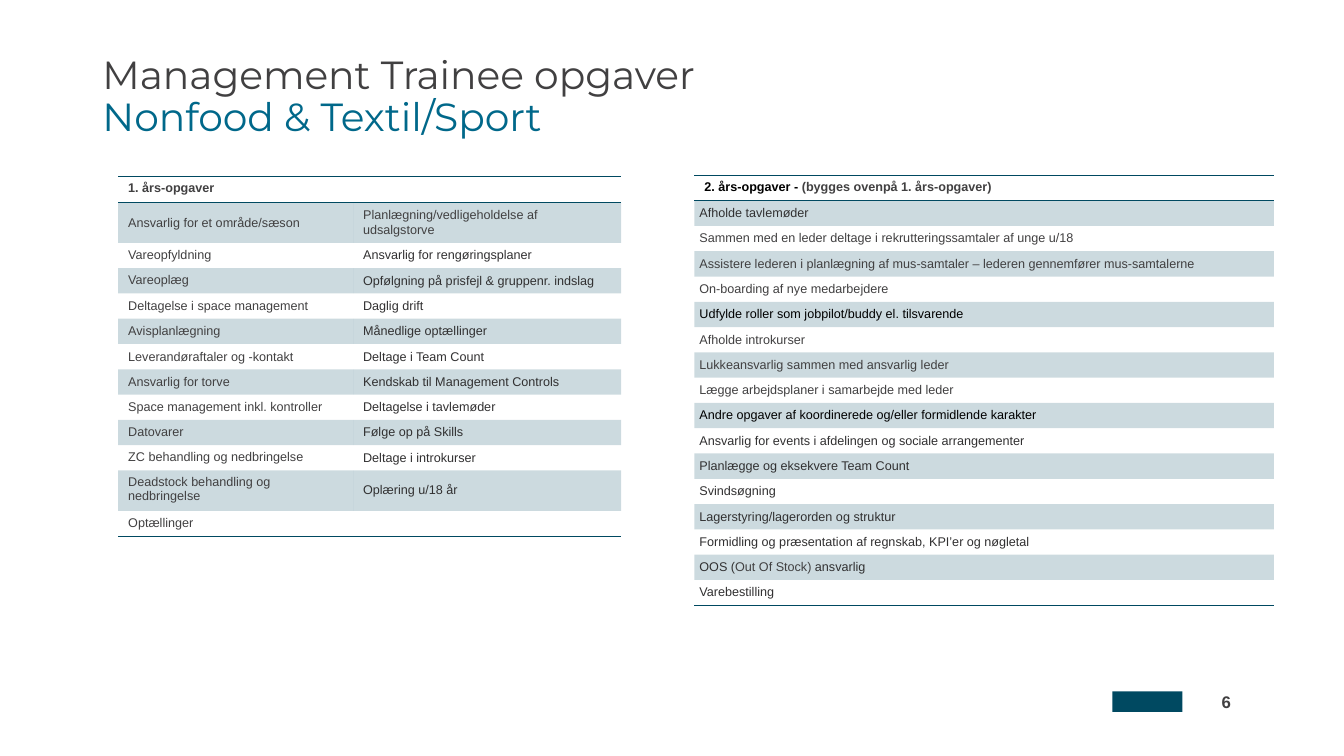
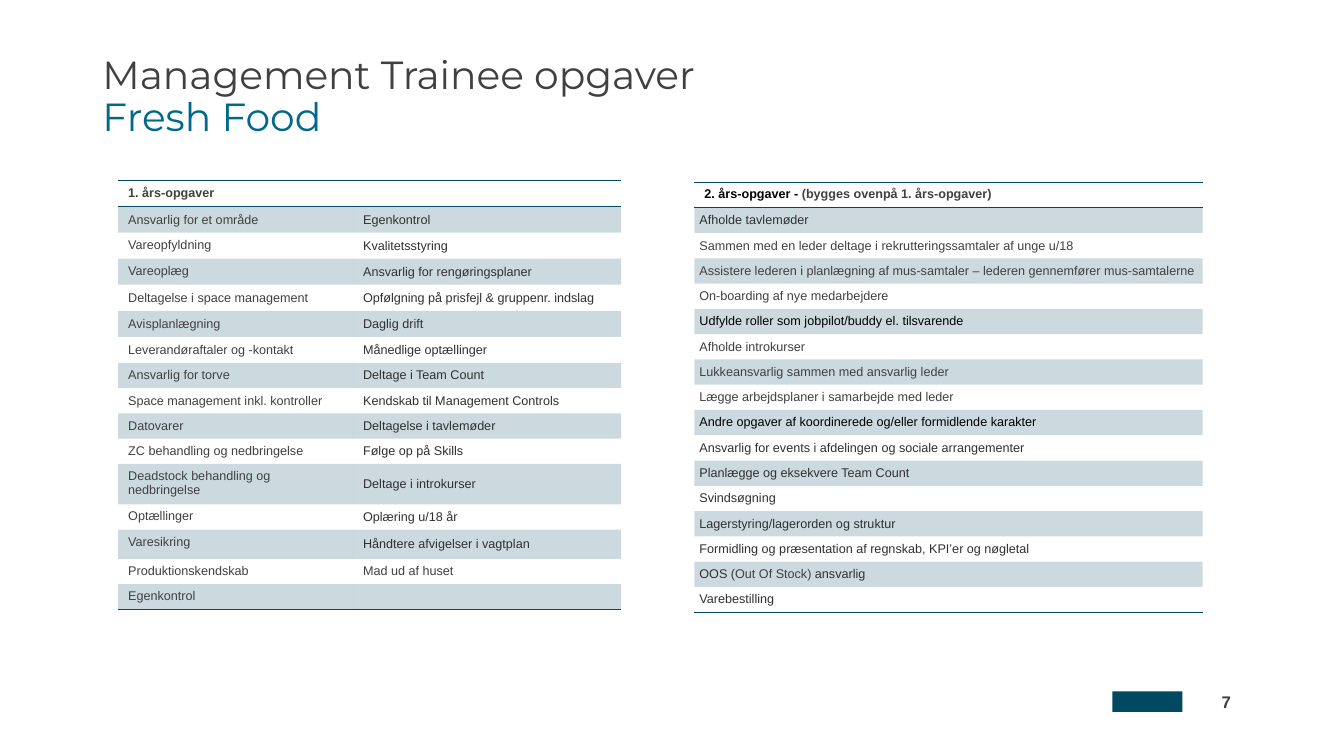
from dataclasses import dataclass

from lxml.etree import SubElement
from pptx import Presentation
from pptx.dml.color import RGBColor
from pptx.enum.shapes import MSO_SHAPE as Preset
from pptx.enum.text import MSO_ANCHOR as Anchor, MSO_AUTO_SIZE as AutoSize, PP_ALIGN as Align
from pptx.oxml.ns import qn
from pptx.util import Pt

COLOURS = {
    "petrol": "004961",
    "teal": "00688A",
    "grey": "414041",
    "charcoal": "313031",
    "black": "000000",
}
TITLE_FONT, BODY_FONT = "Montserrat", "Arial"
NO_STYLE_NO_GRID = "{2D5ABB26-0587-4C30-8999-92F81FD0307C}"
BAND_ALPHA = "20000"
ROW_HEIGHT = 18
TASK_SIZE = 9


@dataclass(frozen=True)
class Run:
    text: str
    colour: str = "grey"
    bold: bool = False


@dataclass(frozen=True)
class Cell:
    runs: tuple[Run, ...] = ()
    anchor: Anchor = Anchor.MIDDLE
    inset: float = 7.2


@dataclass(frozen=True)
class TaskTable:
    left: float
    top: float
    widths: tuple[float, ...]
    heights: tuple[float, ...]
    rows: tuple[tuple[Cell, ...], ...]


@dataclass(frozen=True)
class TraineeSlide:
    department: str
    number: int
    first_year: TaskTable
    second_year: TaskTable


# Tasks that sit at the top of their cell in the first column
TOP_TASKS = {
    "Vareopfyldning", "Vareoplæg", "ZC behandling og nedbringelse",
    "Deadstock behandling og nedbringelse", "Optællinger", "Varesikring",
    "Produktionskendskab", "Egenkontrol",
}
GREY_SECOND_COLUMN = {"Planlægning/vedligeholdelse af udsalgstorve", "Mad ud af huset"}

NONFOOD_TASKS = (
    ("Ansvarlig for et område/sæson", "Planlægning/vedligeholdelse af udsalgstorve"),
    ("Vareopfyldning", "Ansvarlig for rengøringsplaner"),
    ("Vareoplæg", "Opfølgning på prisfejl & gruppenr. indslag"),
    ("Deltagelse i space management", "Daglig drift"),
    ("Avisplanlægning", "Månedlige optællinger"),
    ("Leverandøraftaler og -kontakt", "Deltage i Team Count"),
    ("Ansvarlig for torve", "Kendskab til Management Controls"),
    ("Space management inkl. kontroller", "Deltagelse i tavlemøder"),
    ("Datovarer", "Følge op på Skills"),
    ("ZC behandling og nedbringelse", "Deltage i introkurser"),
    ("Deadstock behandling og nedbringelse", "Oplæring u/18 år"),
    ("Optællinger", ""),
)
FRESH_TASKS = (
    ("Ansvarlig for et område", "Egenkontrol"),
    ("Vareopfyldning", "Kvalitetsstyring"),
    ("Vareoplæg", "Ansvarlig for rengøringsplaner"),
    ("Deltagelse i space management", "Opfølgning på prisfejl & gruppenr. indslag"),
    ("Avisplanlægning", "Daglig drift"),
    ("Leverandøraftaler og -kontakt", "Månedlige optællinger"),
    ("Ansvarlig for torve", "Deltage i Team Count"),
    ("Space management inkl. kontroller", "Kendskab til Management Controls"),
    ("Datovarer", "Deltagelse i tavlemøder"),
    ("ZC behandling og nedbringelse", "Følge op på Skills"),
    ("Deadstock behandling og nedbringelse", "Deltage i introkurser"),
    ("Optællinger", "Oplæring u/18 år"),
    ("Varesikring", "Håndtere afvigelser i vagtplan"),
    ("Produktionskendskab", "Mad ud af huset"),
    ("Egenkontrol", ""),
)
SECOND_YEAR_TASKS = (
    (Run("Afholde tavlemøder", "charcoal"),),
    (Run("Sammen med en leder deltage i rekrutteringssamtaler af unge u/18"),),
    (Run("Assistere lederen i planlægning af mus-samtaler – "
         "lederen gennemfører mus-samtalerne"),),
    (Run("On-boarding af nye medarbejdere"),),
    (Run("Udfylde roller som jobpilot/buddy el. tilsvarende", "black"),),
    (Run("Afholde introkurser"),),
    (Run("Lukkeansvarlig sammen med ansvarlig leder"),),
    (Run("Lægge arbejdsplaner i samarbejde med leder"),),
    (Run("Andre opgaver af koordinerede og/eller formidlende karakter", "black"),),
    (Run("Ansvarlig for events i afdelingen og sociale arrangementer", "charcoal"),),
    (Run("Planlægge og eksekvere Team Count", "charcoal"),),
    (Run("Svindsøgning", "charcoal"),),
    (Run("Lagerstyring/lagerorden og struktur", "charcoal"),),
    (Run("Formidling og præsentation af regnskab, KPI’er og nøgletal", "charcoal"),),
    (Run("OOS (", "charcoal"), Run("Out Of Stock) "), Run("ansvarlig", "charcoal")),
    (Run("Varebestilling", "charcoal"),),
)


def first_year_table(top: float, tasks: tuple[tuple[str, str], ...],
                     heights: tuple[float, ...], header_anchor: Anchor) -> TaskTable:
    def task_cell(task: str, column: int) -> Cell:
        if not task:
            return Cell()
        grey = column == 0 or task in GREY_SECOND_COLUMN
        at_top = column == 0 and task in TOP_TASKS
        return Cell((Run(task, "grey" if grey else "charcoal"),),
                    Anchor.TOP if at_top else Anchor.MIDDLE)

    header = (Cell((Run("1. års-opgaver", bold=True),), header_anchor), Cell())
    body = tuple(tuple(task_cell(task, column) for column, task in enumerate(pair))
                 for pair in tasks)
    return TaskTable(84.4, top, (167.8, 191.5), heights, (header, *body))


def second_year_table(top: float, width: float) -> TaskTable:
    header = Cell((Run("2. års-opgaver - ", "black", True),
                   Run("(bygges ovenpå 1. års-opgaver)", bold=True)), Anchor.TOP)
    rows = ((header,), *((Cell(runs, inset=3.6),) for runs in SECOND_YEAR_TASKS))
    return TaskTable(496, top, (width,), (17.2,) * len(rows), rows)


SLIDES = (
    TraineeSlide(
        "Nonfood & Textil/Sport", 6,
        first_year_table(126, NONFOOD_TASKS,
                         (18.6, *(ROW_HEIGHT,) * 11, 17.5), Anchor.TOP),
        second_year_table(125.3, 414)),
    TraineeSlide(
        "Fresh Food", 7,
        first_year_table(129, FRESH_TASKS,
                         (*(18.6,) * 7, *(ROW_HEIGHT,) * 6, 20.8, 17.5, ROW_HEIGHT),
                         Anchor.MIDDLE),
        second_year_table(130.3, 363)),
)


def rgb(name: str) -> RGBColor:
    return RGBColor.from_string(COLOURS[name])


def add_run(paragraph, run: Run, font_name: str, size: float) -> None:
    part = paragraph.add_run()
    part.text = run.text
    part.font.name = font_name
    part.font.size = Pt(size)
    part.font.bold = run.bold
    part.font.color.rgb = rgb(run.colour)


def add_rule(cell, side: str) -> None:
    """Draw a 1 pt border on side 'T' or 'B'; call before filling the cell."""
    line = SubElement(cell._tc.get_or_add_tcPr(), qn(f"a:ln{side}"), w=str(Pt(1)))
    fill = SubElement(line, qn("a:solidFill"))
    SubElement(fill, qn("a:srgbClr"), val=COLOURS["petrol"])


def fill_band(cell) -> None:
    cell.fill.solid()
    cell.fill.fore_color.rgb = rgb("petrol")
    colour = cell._tc.tcPr.find(f"{qn('a:solidFill')}/{qn('a:srgbClr')}")
    SubElement(colour, qn("a:alpha"), val=BAND_ALPHA)


def write_cell(cell, content: Cell) -> None:
    cell.vertical_anchor = content.anchor
    cell.margin_left = cell.margin_right = Pt(content.inset)
    cell.margin_top = cell.margin_bottom = Pt(3.6)
    paragraph = cell.text_frame.paragraphs[0]
    for run in content.runs:
        add_run(paragraph, run, BODY_FONT, TASK_SIZE)
    if not content.runs:
        SubElement(paragraph._p, qn("a:endParaRPr"), sz=str(TASK_SIZE * 100))


def add_task_table(slide, spec: TaskTable) -> None:
    frame = slide.shapes.add_table(len(spec.rows), len(spec.widths), Pt(spec.left), Pt(spec.top),
                                   Pt(sum(spec.widths)), Pt(sum(spec.heights)))
    table = frame.table
    table.first_row = table.horz_banding = False
    table._tbl.tblPr.find(qn("a:tableStyleId")).text = NO_STYLE_NO_GRID
    for column, width in zip(table.columns, spec.widths):
        column.width = Pt(width)
    for row, height in zip(table.rows, spec.heights):
        row.height = Pt(height)
    last = len(spec.rows) - 1
    for index, contents in enumerate(spec.rows):
        for column, content in enumerate(contents):
            cell = table.cell(index, column)
            write_cell(cell, content)
            if index == 0:
                add_rule(cell, "T")
            if index in (0, last):
                add_rule(cell, "B")
            if index % 2:
                fill_band(cell)
            else:
                cell.fill.background()
    if len(spec.widths) > 1:
        table.cell(0, 0).merge(table.cell(0, len(spec.widths) - 1))


def write_title(slide, department: str) -> None:
    frame = slide.shapes.title.text_frame
    frame.auto_size = AutoSize.NONE
    frame.vertical_anchor = Anchor.MIDDLE
    heading = frame.paragraphs[0]
    heading.alignment = Align.LEFT
    heading.line_spacing = 0.9
    add_run(heading, Run("Management Trainee opgaver"), TITLE_FONT, 28)
    heading.add_line_break()
    add_run(heading, Run(department, "teal"), TITLE_FONT, 28)


def add_footer(slide, number: int) -> None:
    bar = slide.shapes.add_shape(Preset.RECTANGLE, Pt(794.6), Pt(493.8), Pt(50), Pt(14.8))
    bar.shadow.inherit = False
    bar.fill.solid()
    bar.fill.fore_color.rgb = rgb("petrol")
    bar.line.fill.background()
    page = slide.shapes.add_textbox(Pt(843), Pt(490.5), Pt(43.3), Pt(18)).text_frame
    page.word_wrap = True
    page.paragraphs[0].alignment = Align.RIGHT
    add_run(page.paragraphs[0], Run(str(number), bold=True), BODY_FONT, 12)


def main() -> None:
    deck = Presentation()
    deck.slide_width, deck.slide_height = Pt(960), Pt(540)
    layout = deck.slide_layouts.get_by_name("Title Only")
    title = layout.placeholders[0]
    title.left, title.top, title.width, title.height = Pt(66), Pt(28.8), Pt(828), Pt(82)
    for content in SLIDES:
        slide = deck.slides.add_slide(layout)
        write_title(slide, content.department)
        add_footer(slide, content.number)
        add_task_table(slide, content.first_year)
        add_task_table(slide, content.second_year)
    deck.save("out.pptx")


if __name__ == "__main__":
    main()
